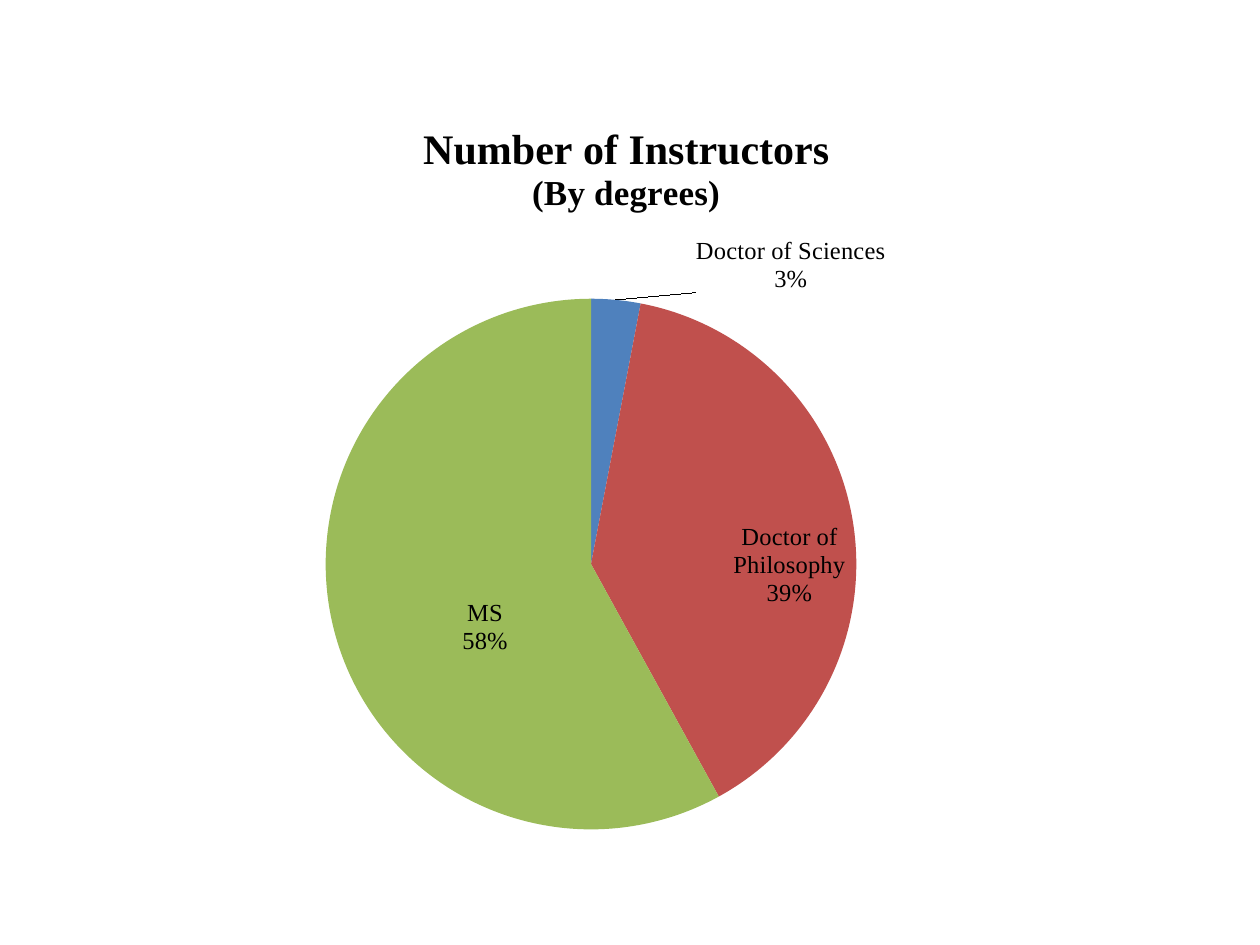
"""Build a slide with a pie chart of instructors by degree."""
from lxml import etree
from pptx import Presentation
from pptx import util as u
from pptx.chart.data import CategoryChartData
from pptx.dml.color import RGBColor
from pptx.enum import chart as ch
from pptx.oxml.ns import qn

BLACK = RGBColor(0x00, 0x00, 0x00)
BLUE = RGBColor(0x4F, 0x81, 0xBD)
RED = RGBColor(0xC0, 0x50, 0x4D)
GREEN = RGBColor(0x9B, 0xBB, 0x59)
SERIF = "Times New Roman"

TITLE = [("Number of Instructors", 24), ("(By degrees)", 20)]
POSITION = ch.XL_LABEL_POSITION
DEGREES = [
    ("Doctor of Sciences", 3, BLUE, POSITION.OUTSIDE_END, (0.07, 0)),
    ("Doctor of Philosophy", 39, RED, POSITION.INSIDE_END, None),
    ("MS", 58, GREEN, POSITION.CENTER, (0.02, 0.04)),
]
CHART_BOX = (0.47, 0.78, 9, 5.94)
PIE_AREA = {"x": 0.235, "y": 0.268, "w": 0.468, "h": 0.709}


def add(parent, tag, value):
    """Append a chart element that holds one value."""
    etree.SubElement(parent, qn(f"c:{tag}")).set("val", str(value))


def make_layout(**shares):
    """Return a manual layout given as shares of the chart."""
    layout = etree.Element(qn("c:layout"))
    manual = etree.SubElement(layout, qn("c:manualLayout"))
    if "w" in shares:
        add(manual, "layoutTarget", "inner")
        add(manual, "xMode", "edge")
        add(manual, "yMode", "edge")
    for name, share in shares.items():
        add(manual, name, share)
    return layout


def style(font, size):
    """Set the serif face, size and colour."""
    font.name, font.size = SERIF, u.Pt(size)
    font.color.rgb = BLACK


def show_name_and_percent(labels):
    """Show the category over its percentage."""
    for tag, shown in (("showVal", 0), ("showCatName", 1), ("showPercent", 1)):
        labels.find(qn(f"c:{tag}")).set("val", str(shown))
    separator = etree.Element(qn("c:separator"))
    separator.text = "\n"
    last = labels.find(qn("c:showBubbleSize"))
    if last is None:
        last = labels.find(qn("c:showPercent"))
    last.addnext(separator)


def add_title(chart):
    frame = chart.chart_title.text_frame
    frame.text = "\n".join(line for line, size in TITLE)
    for para, (line, size) in zip(frame.paragraphs, TITLE):
        style(para.runs[0].font, size)
        para.runs[0].font.bold = True
    chart.chart_title.include_in_layout = False


def add_labels(plot, series):
    labels = series.data_labels
    style(labels.font, 14)
    for index, (name, count, color, position, offset) in enumerate(DEGREES):
        point = series.points[index]
        point.format.fill.solid()
        point.format.fill.fore_color.rgb = color
        style(point.data_label.font, 14)
        point.data_label.position = position
    group = series._element.find(qn("c:dLbls"))
    for label, degree in zip(group.findall(qn("c:dLbl")), DEGREES):
        show_name_and_percent(label)
        if degree[4]:
            x, y = degree[4]
            label.find(qn("c:idx")).addnext(make_layout(x=x, y=y))
    show_name_and_percent(group)
    for old in group.findall(qn("c:showLeaderLines")):
        group.remove(old)
    add(group, "showLeaderLines", 1)


def main():
    deck = Presentation()
    deck.slide_width, deck.slide_height = u.Inches(10), u.Inches(7.5)
    page = deck.slides.add_slide(deck.slide_layouts[6])
    data = CategoryChartData()
    data.categories = [degree[0] for degree in DEGREES]
    data.add_series("Series 1", [degree[1] for degree in DEGREES])
    chart = page.shapes.add_chart(
        ch.XL_CHART_TYPE.PIE, *map(u.Inches, CHART_BOX), data).chart
    chart.font.name, chart.font.size = "Calibri", u.Pt(10)
    chart.font.color.rgb = BLACK
    chart.has_legend = False
    add_title(chart)
    plot = chart.plots[0]
    plot.vary_by_categories = True
    add_labels(plot, plot.series[0])
    area = chart._chartSpace.find(".//" + qn("c:plotArea"))
    for old in area.findall(qn("c:layout")):
        area.remove(old)
    area.insert(0, make_layout(**PIE_AREA))
    deck.save("out.pptx")


if __name__ == "__main__":
    main()
